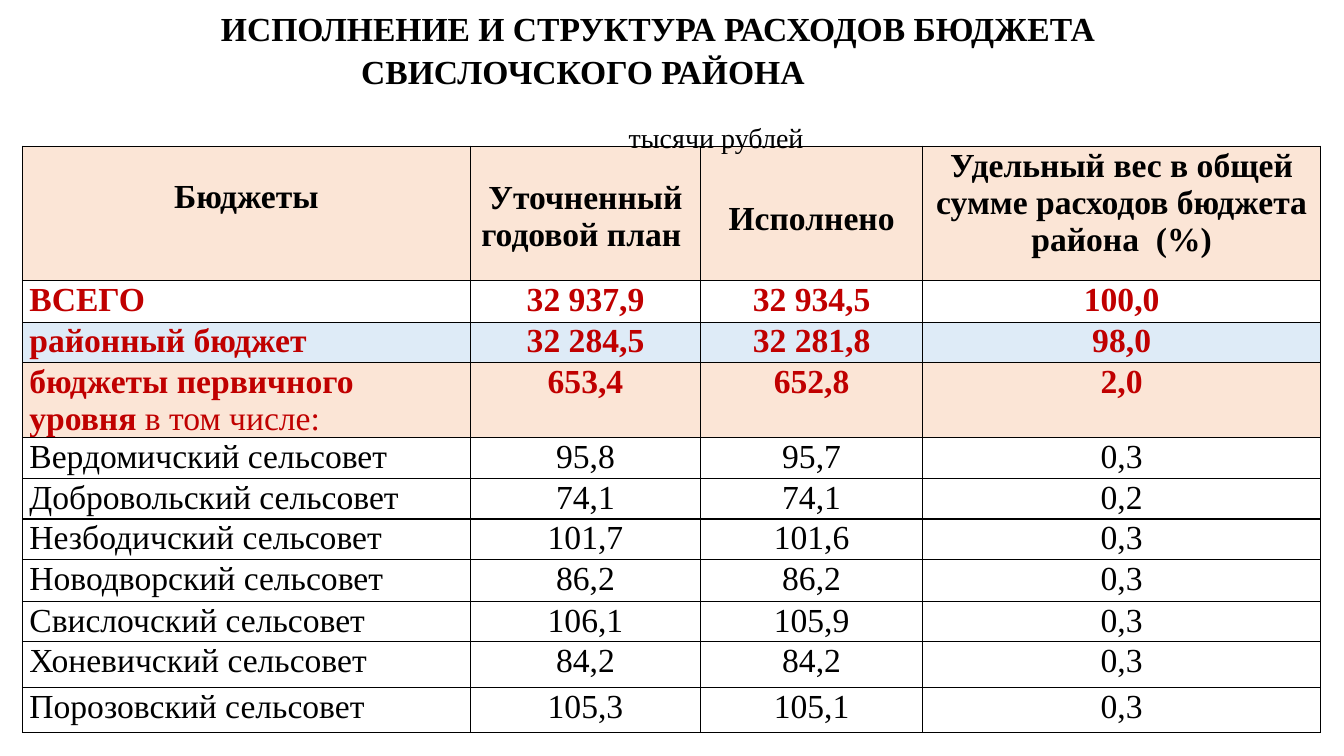
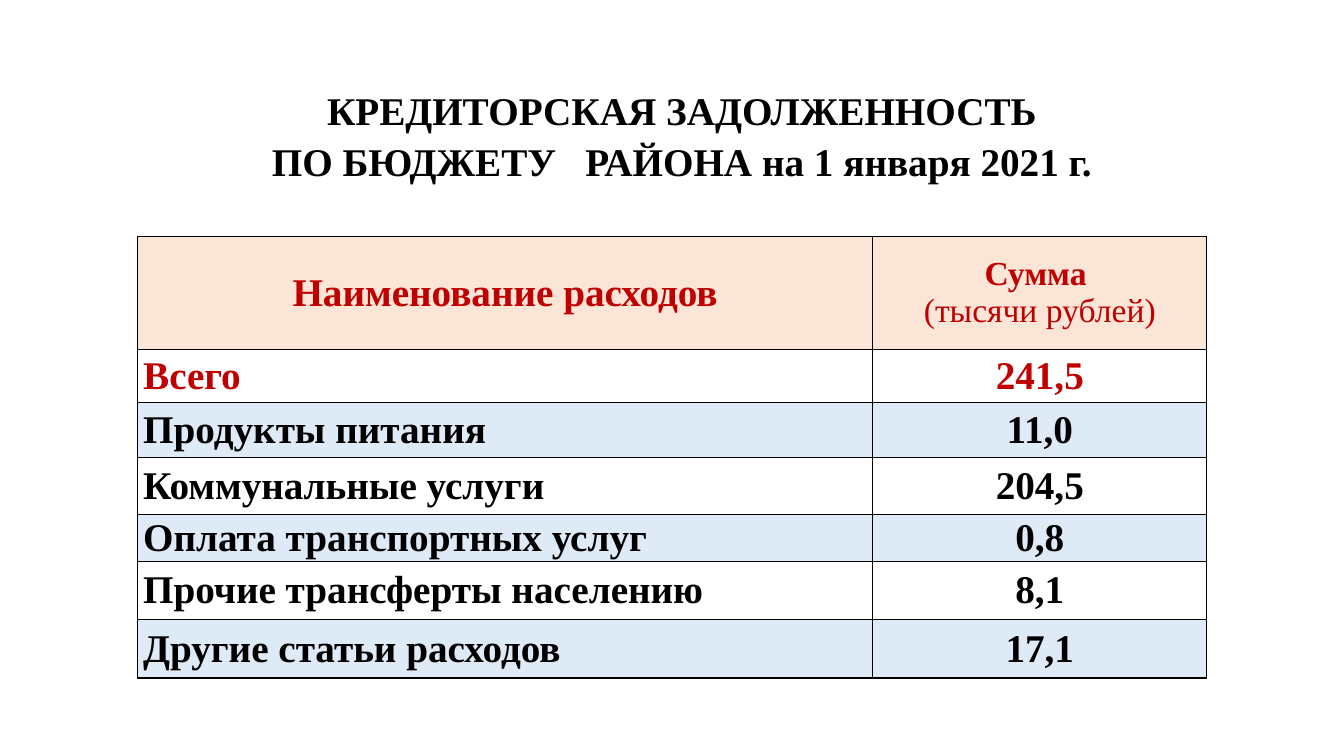
from dataclasses import dataclass

from lxml.etree import SubElement
from pptx import Presentation
from pptx.dml.color import RGBColor
from pptx.enum.text import MSO_ANCHOR as Anchor, MSO_AUTO_SIZE as AutoSize, PP_ALIGN as Align
from pptx.oxml.ns import qn
from pptx.util import Pt

FONT = "Times New Roman"
BLACK = RGBColor(0x00, 0x00, 0x00)
WHITE = RGBColor(0xFF, 0xFF, 0xFF)
RED = RGBColor(0xC0, 0x00, 0x00)
PEACH = RGBColor(0xFB, 0xE5, 0xD6)
PALE_BLUE = RGBColor(0xDE, 0xEB, 0xF7)
TITLE_SPACING = 1.08


@dataclass(frozen=True)
class Run:
    text: str
    size: float
    bold: bool = True
    color: RGBColor = BLACK


@dataclass(frozen=True)
class Cell:
    paragraphs: tuple[tuple[Run, ...], ...]
    align: Align = Align.CENTER
    anchor: Anchor = Anchor.MIDDLE
    top_margin: float = 0


@dataclass(frozen=True)
class Row:
    height: float
    fill: RGBColor
    cells: tuple[Cell, ...]


@dataclass(frozen=True)
class TableSpec:
    left: float
    top: float
    widths: tuple[float, ...]
    side_margin: float
    rows: tuple[Row, ...]


def add_run(para, run: Run) -> None:
    span = para.add_run()
    span.text = run.text
    span.font.name = FONT
    span.font.size = Pt(run.size)
    span.font.bold = run.bold
    span.font.color.rgb = run.color


def write_paragraphs(frame, paragraphs, align: Align) -> None:
    for index, runs in enumerate(paragraphs):
        para = frame.add_paragraph() if index else frame.paragraphs[0]
        para.alignment = align
        for run in runs:
            add_run(para, run)


def prepare_frame(frame) -> None:
    """Remove the insets and keep the box at its given size."""
    frame.word_wrap = True
    frame.auto_size = AutoSize.NONE
    frame.vertical_anchor = Anchor.TOP
    frame.margin_left = frame.margin_right = frame.margin_top = frame.margin_bottom = 0


def place(box, left: float, top: float, width: float, height: float) -> None:
    box.left, box.top, box.width, box.height = Pt(left), Pt(top), Pt(width), Pt(height)


def add_title(page, left: float, top: float, width: float, size: float, lines: tuple[str, ...]):
    title = page.shapes.title
    place(title, left, top, width, 75)
    prepare_frame(title.text_frame)
    write_paragraphs(title.text_frame, [(Run(line, size),) for line in lines], Align.CENTER)
    for para in title.text_frame.paragraphs:
        para.line_spacing = TITLE_SPACING
    return title


def add_borders(cell) -> None:
    properties = cell._tc.get_or_add_tcPr()
    for side in ("a:lnL", "a:lnR", "a:lnT", "a:lnB"):
        line = SubElement(properties, qn(side), w=str(Pt(1)))
        fill = SubElement(line, qn("a:solidFill"))
        SubElement(fill, qn("a:srgbClr"), val=str(BLACK))


def add_table(page, spec: TableSpec) -> None:
    height = sum(row.height for row in spec.rows)
    frame = page.shapes.add_table(
        len(spec.rows), len(spec.widths),
        Pt(spec.left), Pt(spec.top), Pt(sum(spec.widths)), Pt(height),
    )
    table = frame.table
    table.first_row = table.horz_banding = False
    for column, width in zip(table.columns, spec.widths):
        column.width = Pt(width)
    for row_index, row in enumerate(spec.rows):
        table.rows[row_index].height = Pt(row.height)
        for column_index, content in enumerate(row.cells):
            cell = table.cell(row_index, column_index)
            cell.margin_left = cell.margin_right = Pt(spec.side_margin)
            cell.margin_top, cell.margin_bottom = Pt(content.top_margin), 0
            cell.vertical_anchor = content.anchor
            add_borders(cell)
            cell.fill.solid()
            cell.fill.fore_color.rgb = row.fill
            write_paragraphs(cell.text_frame, content.paragraphs, content.align)


def data_row(height: float, fill: RGBColor, label: tuple[Run, ...], values: tuple[str, ...],
             anchor: Anchor, top_margin: float = 0) -> Row:
    """Left-aligned label, then centred values in the style of the label's first run."""
    style = label[0]
    cells = [Cell((label,), Align.LEFT, anchor, top_margin)]
    for value in values:
        run = Run(value, style.size, style.bold, style.color)
        cells.append(Cell(((run,),), Align.CENTER, anchor, top_margin))
    return Row(height, fill, tuple(cells))


def build_expenditure_page(page) -> None:
    size = 24
    title = add_title(page, 0, 3, 940, size,
                      ("ИСПОЛНЕНИЕ И СТРУКТУРА РАСХОДОВ БЮДЖЕТА", "СВИСЛОЧСКОГО РАЙОНА"))
    district_line = title.text_frame.paragraphs[1]
    district_line.alignment = Align.LEFT
    district_line._p.get_or_add_pPr().set("marL", str(Pt(258)))

    header = Row(95.7, PEACH, (
        Cell(((Run("Бюджеты", size),),), anchor=Anchor.TOP, top_margin=23),
        Cell(((Run("Уточненный годовой план ", size),),), top_margin=5),
        Cell(((Run("Исполнено", size),),), top_margin=8.5),
        Cell(((Run("Удельный вес в общей сумме расходов бюджета района  (%)", size),),),
             anchor=Anchor.TOP, top_margin=0.7),
    ))
    totals = (
        (30, WHITE, "ВСЕГО", "", ("32 937,9", "32 934,5", "100,0")),
        (28.8, PALE_BLUE, "районный бюджет", "", ("32 284,5", "32 281,8", "98,0")),
        (53.5, PEACH, "бюджеты первичного уровня ", "в том числе:", ("653,4", "652,8", "2,0")),
    )
    councils = (
        (29.2, "Вердомичский", ("95,8", "95,7", "0,3")),
        (28.8, "Добровольский", ("74,1", "74,1", "0,2")),
        (29.2, "Незбодичский", ("101,7", "101,6", "0,3")),
        (29.8, "Новодворский", ("86,2", "86,2", "0,3")),
        (28.8, "Свислочский", ("106,1", "105,9", "0,3")),
        (32.8, "Хоневичский", ("84,2", "84,2", "0,3")),
        (32, "Порозовский", ("105,3", "105,1", "0,3")),
    )
    rows = [header]
    for height, fill, name, remark, values in totals:
        label = (Run(name, size, True, RED),)
        if remark:
            label += (Run(remark, size, False, RED),)
        rows.append(data_row(height, fill, label, values, Anchor.TOP, 0.7))
    for height, name, values in councils:
        label = (Run(f"{name} сельсовет", size, False),)
        rows.append(data_row(height, WHITE, label, values, Anchor.TOP, 0.7))
    add_table(page, TableSpec(16, 104.4, (320, 164.5, 158.5, 284.5), 5, tuple(rows)))

    unit_box = page.shapes.add_textbox(Pt(449), Pt(86), Pt(135), Pt(24))
    prepare_frame(unit_box.text_frame)
    write_paragraphs(unit_box.text_frame, [(Run("тысячи рублей", 20, False),)], Align.LEFT)


def build_payables_page(page) -> None:
    size = 28
    add_title(page, 117, 59, 740, size,
              ("КРЕДИТОРСКАЯ ЗАДОЛЖЕННОСТЬ", "ПО БЮДЖЕТУ   РАЙОНА на 1 января 2021 г."))
    header = Row(80.6, PEACH, (
        Cell(((Run("Наименование расходов", size, True, RED),),)),
        Cell(((Run("Сумма ", 24, True, RED),), (Run("(тысячи рублей)", 24, False, RED),))),
    ))
    items = (
        (38, "Всего", "241,5"),
        (39.2, "Продукты питания", "11,0"),
        (40.8, "Коммунальные услуги", "204,5"),
        (33.4, "Оплата транспортных услуг", "0,8"),
        (41.6, "Прочие трансферты населению", "8,1"),
        (41.8, "Другие статьи расходов", "17,1"),
    )
    rows = [header]
    for index, (height, name, amount) in enumerate(items):
        fill = PALE_BLUE if index % 2 else WHITE
        label = (Run(name, size, True, BLACK if index else RED),)
        rows.append(data_row(height, fill, label, (amount,), Anchor.MIDDLE))
    add_table(page, TableSpec(98, 169, (525.5, 238.5), 4.3, tuple(rows)))


def main() -> None:
    deck = Presentation()
    deck.slide_width, deck.slide_height = Pt(960), Pt(540)
    title_only = deck.slide_layouts[5]
    for build in (build_expenditure_page, build_payables_page):
        build(deck.slides.add_slide(title_only))
    deck.save("out.pptx")


if __name__ == "__main__":
    main()
